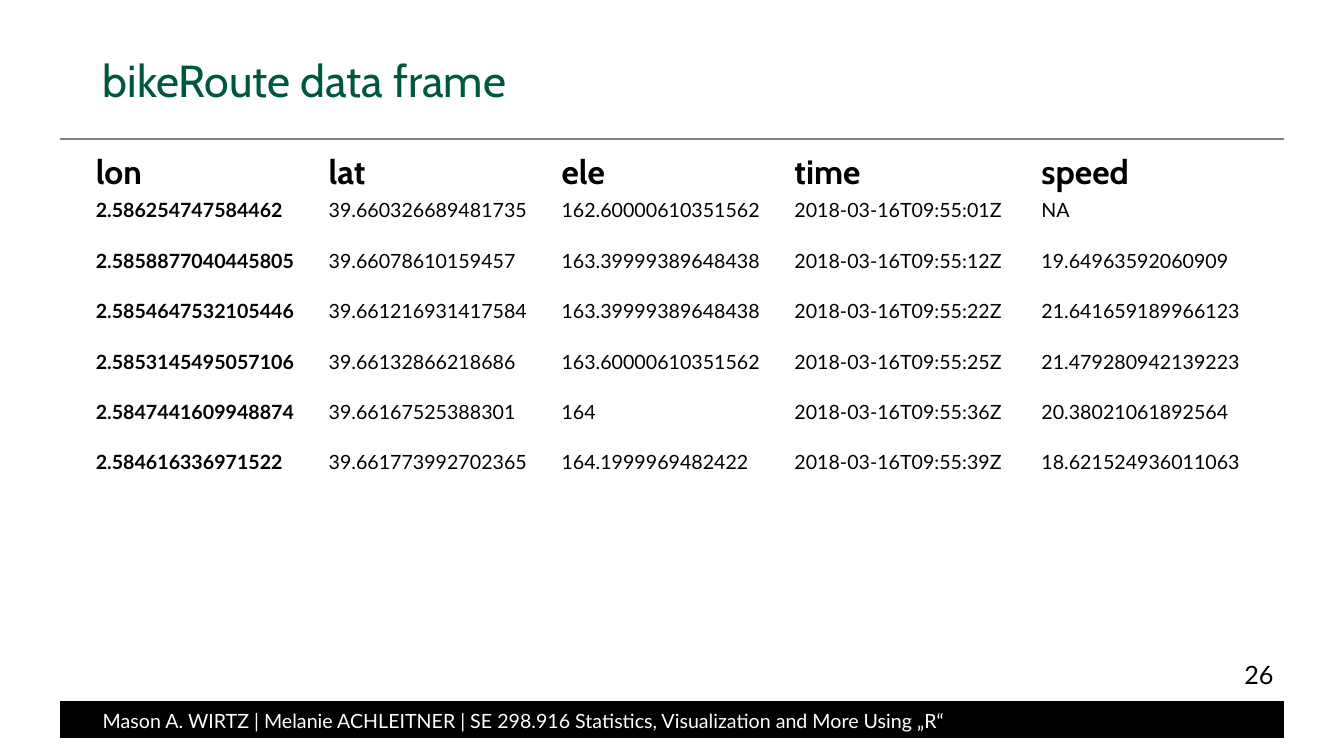
"""Build the bikeRoute data frame slide."""
from dataclasses import dataclass

from lxml.etree import SubElement
from pptx import Presentation
from pptx.dml.color import RGBColor
from pptx.enum.shapes import MSO_CONNECTOR, MSO_SHAPE
from pptx.enum.text import MSO_ANCHOR, PP_ALIGN
from pptx.oxml.ns import qn
from pptx.slide import Slide
from pptx.text.text import _Paragraph as Para
from pptx.util import Inches, Pt

BLACK = RGBColor(0, 0, 0)
WHITE = RGBColor(255, 255, 255)
GREEN = RGBColor(0x00, 0x57, 0x40)
GRAY = RGBColor(0x80, 0x80, 0x80)


@dataclass(frozen=True)
class Style:
    font: str
    size: int
    color: RGBColor = BLACK
    bold: bool = False


@dataclass(frozen=True)
class Label:
    text: str
    left: float
    top: float
    width: float
    height: float
    style: Style
    align: PP_ALIGN = PP_ALIGN.LEFT
    pitch: float = 1.0


HEAD = Style("Cabin", 24, bold=True)
KEY = Style("Lato", 14, bold=True)
BODY = Style("Lato", 14)

LABELS = [
    Label("bikeRoute data frame", 0.92, 0.38, 9.51, 0.88,
          Style("Cabin", 32, GREEN), pitch=0.9),
    Label("Mason A. WIRTZ | Melanie ACHLEITNER | SE 298.916 Statistics, "
          "Visualization and More Using „R“",
          0.92, 6.98, 9.51, 0.33, Style("Lato", 14, WHITE)),
    Label("26", 11.57, 6.53, 1.16, 0.33, Style("Lato", 18), PP_ALIGN.RIGHT),
]

WIDTHS = [2.31, 2.31, 2.31, 2.45, 2.45]
TALL = [0.45] + [0.5] * 6
DATA = [
    ("lon", "lat", "ele", "time", "speed"),
    ("2.586254747584462", "39.660326689481735", "162.60000610351562",
     "2018-03-16T09:55:01Z", "NA"),
    ("2.5858877040445805", "39.66078610159457", "163.39999389648438",
     "2018-03-16T09:55:12Z", "19.64963592060909"),
    ("2.5854647532105446", "39.661216931417584", "163.39999389648438",
     "2018-03-16T09:55:22Z", "21.641659189966123"),
    ("2.5853145495057106", "39.66132866218686", "163.60000610351562",
     "2018-03-16T09:55:25Z", "21.479280942139223"),
    ("2.5847441609948874", "39.66167525388301", "164",
     "2018-03-16T09:55:36Z", "20.38021061892564"),
    ("2.584616336971522", "39.661773992702365", "164.1999969482422",
     "2018-03-16T09:55:39Z", "18.621524936011063"),
]


def add_run(para: Para, text: str, style: Style) -> None:
    run = para.add_run()
    run.text = text
    run.font.name = style.font
    run.font.size = Pt(style.size)
    run.font.bold = style.bold
    run.font.color.rgb = style.color


def add_label(slide: Slide, label: Label) -> None:
    box = slide.shapes.add_textbox(Inches(label.left), Inches(label.top),
                                   Inches(label.width), Inches(label.height))
    frame = box.text_frame
    frame.word_wrap = True
    frame.vertical_anchor = MSO_ANCHOR.MIDDLE
    para = frame.paragraphs[0]
    para.alignment = label.align
    para.line_spacing = label.pitch
    add_run(para, label.text, label.style)


def add_bar(slide: Slide) -> None:
    bar = slide.shapes.add_shape(MSO_SHAPE.RECTANGLE, Inches(0.6),
                                 Inches(6.96), Inches(12.13), Inches(0.36))
    bar.shadow.inherit = False
    bar.fill.solid()
    bar.fill.fore_color.rgb = BLACK
    bar.line.color.rgb = BLACK
    bar.line.width = Pt(1)


def add_rule(slide: Slide) -> None:
    rule = slide.shapes.add_connector(MSO_CONNECTOR.STRAIGHT, Inches(0.6),
                                      Inches(1.38), Inches(12.73), Inches(1.38))
    rule.line.color.rgb = GRAY
    rule.line.width = Pt(1.5)
    SubElement(rule._element.spPr, qn("a:effectLst"))


def add_grid(slide: Slide) -> None:
    grid = slide.shapes.add_table(len(DATA), len(WIDTHS), Inches(0.92),
                                  Inches(1.48), Inches(sum(WIDTHS)),
                                  Inches(sum(TALL))).table
    grid.horz_banding = False
    grid.first_row = False
    for col, width in zip(grid.columns, WIDTHS):
        col.width = Inches(width)
    for i, (row, height) in enumerate(zip(grid.rows, TALL)):
        row.height = Inches(height)
        for j, cell in enumerate(row.cells):
            cell.fill.background()
            cell.margin_left = cell.margin_right = Inches(0.03)
            cell.margin_top = cell.margin_bottom = Inches(0.03)
            style = HEAD if i == 0 else KEY if j == 0 else BODY
            add_run(cell.text_frame.paragraphs[0], DATA[i][j], style)


def main() -> None:
    deck = Presentation()
    deck.slide_width = Inches(13.33)
    deck.slide_height = Inches(7.5)
    slide = deck.slides.add_slide(deck.slide_layouts[6])
    add_bar(slide)
    add_rule(slide)
    for label in LABELS:
        add_label(slide, label)
    add_grid(slide)
    deck.save("out.pptx")


if __name__ == "__main__":
    main()
